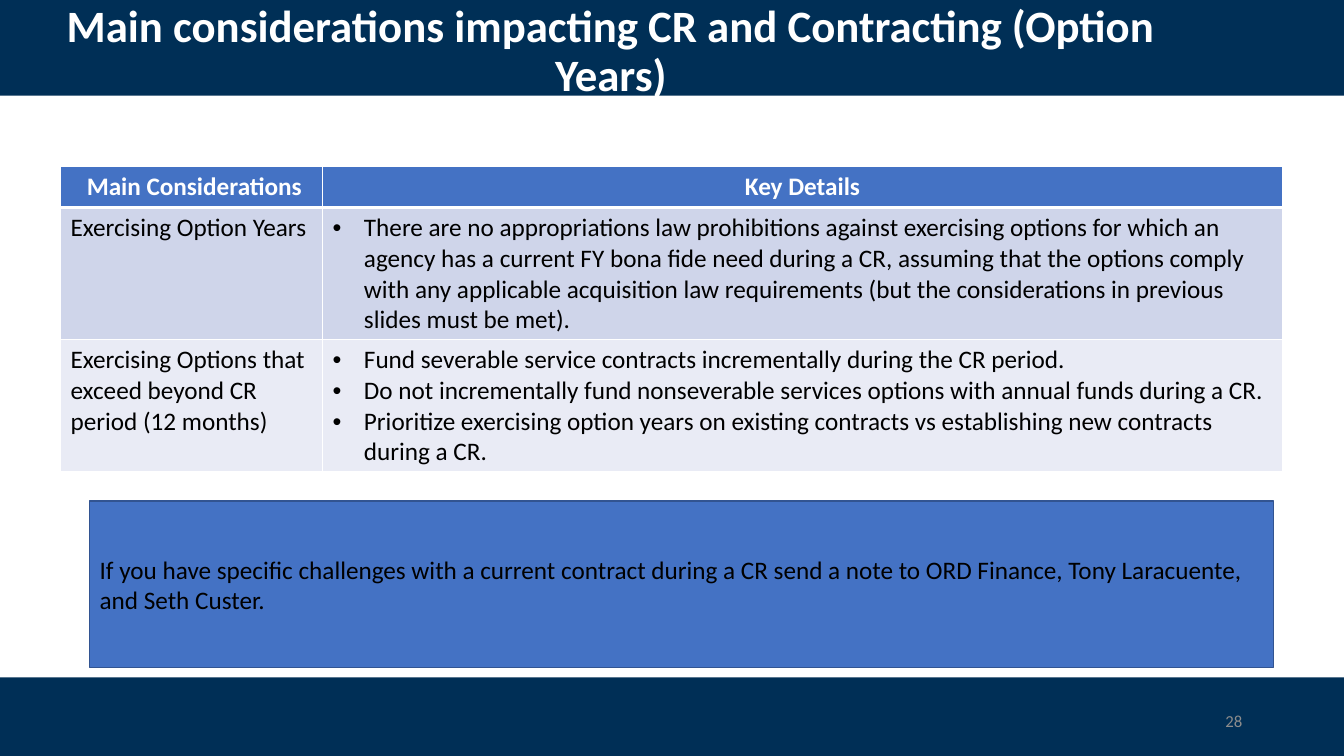
from dataclasses import dataclass

from lxml.etree import SubElement
from pptx import Presentation
from pptx.dml.color import RGBColor
from pptx.enum.shapes import MSO_SHAPE
from pptx.enum.text import MSO_ANCHOR, MSO_AUTO_SIZE, PP_ALIGN
from pptx.oxml.ns import qn
from pptx.util import Emu, Pt

PX = 9144  # 100 px to the inch


@dataclass(frozen=True)
class Theme:
    font: str = "Calibri"
    navy: str = "002F56"
    blue: str = "4472C4"
    edge: str = "325491"
    bands: tuple = ("CFD5EA", "E9EBF5")
    white: str = "FFFFFF"
    black: str = "000000"
    gray: str = "8C8C8C"
    head: int = 32
    body: int = 18
    small: int = 12


def box(*sizes):
    """Turn px lengths into EMU."""
    return [Emu(n * PX) for n in sizes]


class Deck:
    def __init__(self, theme):
        self.theme = theme
        self.file = Presentation()
        self.file.slide_width, self.file.slide_height = box(1333, 750)
        self.slide = self.file.slides.add_slide(self.file.slide_layouts[5])
        self.shapes = self.slide.shapes

    def text(self, frame, lines, size, color, bold=False, align=PP_ALIGN.LEFT, bullet=False):
        """Fill a text frame with one styled paragraph per line."""
        frame.word_wrap = True
        for i, line in enumerate(lines):
            para = frame.paragraphs[0] if i == 0 else frame.add_paragraph()
            para.text = line
            para.alignment = align
            if bullet:
                self.bullet(para)
            font = para.font
            font.name, font.size, font.bold = self.theme.font, Pt(size), bold
            font.color.rgb = RGBColor.from_string(color)

    def bullet(self, para):
        props = para._p.get_or_add_pPr()
        indent = 31 * PX
        props.set("marL", str(indent))
        props.set("indent", str(-indent))
        SubElement(props, qn("a:buFont"), typeface="Arial")
        SubElement(props, qn("a:buChar"), char="•")

    def rect(self, at, fill, line=None):
        shape = self.shapes.add_shape(MSO_SHAPE.RECTANGLE, *box(*at))
        shape.shadow.inherit = False
        shape.fill.solid()
        shape.fill.fore_color.rgb = RGBColor.from_string(fill)
        if line:
            shape.line.color.rgb = RGBColor.from_string(line)
            shape.line.width = Pt(1)
        else:
            shape.line.fill.background()
        return shape

    def title(self, at, text):
        shape = self.shapes.title
        # Bring the title in front of the bars
        self.shapes._spTree.append(shape._element)
        shape.left, shape.top, shape.width, shape.height = box(*at)
        frame = shape.text_frame
        frame.auto_size = MSO_AUTO_SIZE.NONE
        frame.vertical_anchor = MSO_ANCHOR.MIDDLE
        self.text(frame, [text], self.theme.head, self.theme.white, True, PP_ALIGN.CENTER)
        frame.paragraphs[0].line_spacing = 0.9

    def number(self, at, text):
        frame = self.shapes.add_textbox(*box(*at)).text_frame
        frame.vertical_anchor = MSO_ANCHOR.MIDDLE
        self.text(frame, [text], self.theme.small, self.theme.gray, align=PP_ALIGN.RIGHT)

    def note(self, at, text):
        frame = self.rect(at, self.theme.blue, self.theme.edge).text_frame
        frame.vertical_anchor = MSO_ANCHOR.MIDDLE
        self.text(frame, [text], self.theme.body, self.theme.black)

    def border(self, cell, row):
        """Rule the cell in white, heavier between header and body."""
        props = cell._tc.get_or_add_tcPr()
        heavy = {0: "lnB", 1: "lnT"}.get(row)
        for side in ("lnL", "lnR", "lnT", "lnB"):
            width = Pt(3 if side == heavy else 1)
            line = SubElement(props, qn(f"a:{side}"), w=str(width))
            fill = SubElement(line, qn("a:solidFill"))
            SubElement(fill, qn("a:srgbClr"), val=self.theme.white)

    def table(self, left, top, cols, rows, cells):
        theme = self.theme
        at = box(left, top, sum(cols), sum(rows))
        table = self.shapes.add_table(len(rows), len(cols), *at).table
        for col, width in zip(table.columns, box(*cols)):
            col.width = width
        for row, height in zip(table.rows, box(*rows)):
            row.height = height
        for r, line in enumerate(cells):
            for c, texts in enumerate(line):
                cell = table.cell(r, c)
                self.border(cell, r)
                cell.fill.solid()
                fill = theme.bands[(r - 1) % 2] if r else theme.blue
                cell.fill.fore_color.rgb = RGBColor.from_string(fill)
                if r == 0:
                    self.text(cell.text_frame, texts, theme.body, theme.white, True, PP_ALIGN.CENTER)
                else:
                    self.text(cell.text_frame, texts, theme.body, theme.black, bullet=c == 1)


CELLS = [
    [[" Main Considerations"], ["Key Details"]],
    [
        ["Exercising Option Years"],
        ["There are no appropriations law prohibitions against exercising options for which an "
         "agency has a current FY bona fide need during a CR, assuming that the options comply "
         "with any applicable acquisition law requirements (but the considerations in previous "
         "slides must be met)."],
    ],
    [
        ["Exercising Options that exceed beyond CR period (12 months)"],
        ["Fund severable service contracts incrementally during the CR period.",
         "Do not incrementally fund nonseverable services options with annual funds during a CR.",
         "Prioritize exercising option years on existing contracts vs establishing new contracts "
         "during a CR."],
    ],
]


def main():
    deck = Deck(Theme())
    for top, height in ((0, 95), (672, 80)):
        deck.rect((0, top, 1333, height), deck.theme.navy)
    deck.title((31, 18, 1150, 68),
               "Main considerations impacting CR and Contracting (Option Years)")
    deck.number((942, 695, 300, 40), "28")
    deck.table(60, 165, (260, 952), (41, 131, 131), CELLS)
    deck.note((89, 497, 1174, 165),
              "If you have specific challenges with a current contract during a CR send a note "
              "to ORD Finance, Tony Laracuente, and Seth Custer.")
    deck.file.save("out.pptx")


if __name__ == "__main__":
    main()
